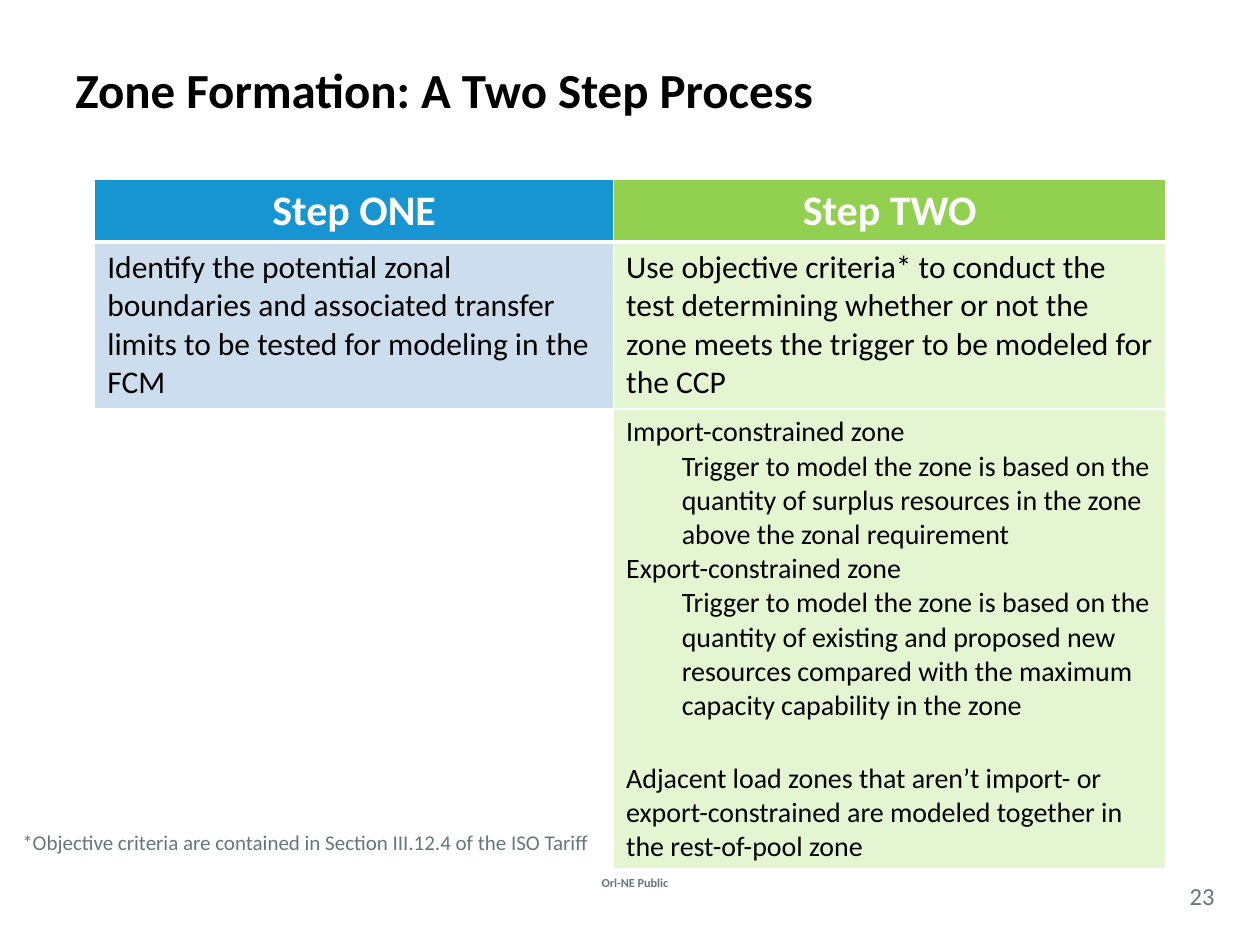
from dataclasses import dataclass

from pptx import Presentation, util as u
from pptx.dml.color import RGBColor
from pptx.enum import text
from pptx.oxml import parse_xml
from pptx.oxml.ns import nsdecls

Cm, Pt = u.Cm, u.Pt
LEFT, MID = text.PP_ALIGN.LEFT, text.PP_ALIGN.CENTER


@dataclass(frozen=True)
class Theme:
    font: str = "Calibri"
    black: str = "000000"
    white: str = "FFFFFF"
    gray: str = "62777F"
    blue: str = "1795D2"
    green: str = "92D050"
    pale_blue: str = "CCDDEE"
    pale_green: str = "E4F5D1"
    title: int = 28
    head: int = 24
    body: int = 18
    detail: int = 16
    page: int = 14
    note: int = 12
    foot: int = 7


T = Theme()

HEADS = ["Step ONE", "Step TWO"]
GOALS = [
    "Identify the potential zonal boundaries and associated transfer limits "
    "to be tested for modeling in the FCM",
    "Use objective criteria* to conduct the test determining whether or not "
    "the zone meets the trigger to be modeled for the CCP",
]
# Each detail line: words, left indent in cm, space before in points
RULES = [
    ("Import-constrained zone", 0, 0),
    ("Trigger to model the zone is based on the quantity of surplus "
     "resources in the zone above the zonal requirement", 1.12, 0),
    ("Export-constrained zone", 0, 0),
    ("Trigger to model the zone is based on the quantity of existing and "
     "proposed new resources compared with the maximum capacity capability "
     "in the zone", 1.12, 0),
    ("Adjacent load zones that aren’t import- or export-constrained are "
     "modeled together in the rest-of-pool zone", 0, 22),
]


def style(para, size, color, bold=False, align=LEFT):
    para.alignment = align
    for run in para.runs:
        font = run.font
        font.name, font.size, font.bold = T.font, Pt(size), bold
        font.color.rgb = RGBColor.from_string(color)


def add_text(slide, words, box, size, color, bold=False, align=LEFT,
             anchor=text.MSO_ANCHOR.MIDDLE, wrap=True, inset=True):
    frame = slide.shapes.add_textbox(*map(Cm, box)).text_frame
    frame.text = words
    frame.word_wrap = wrap
    frame.vertical_anchor = anchor
    if not inset:
        frame.margin_left = frame.margin_right = 0
        frame.margin_top = frame.margin_bottom = 0
    style(frame.paragraphs[0], size, color, bold, align)


def edge(cell, bottom=1, top=1):
    """Draw white borders; widths are in points."""
    props = cell._tc.get_or_add_tcPr()
    sides = [("L", 1), ("R", 1), ("T", top), ("B", bottom)]
    for spot, (side, width) in enumerate(sides):
        props.insert(spot, parse_xml(
            f'<a:ln{side} {nsdecls("a")} w="{Pt(width)}"><a:solidFill>'
            f'<a:srgbClr val="{T.white}"/></a:solidFill></a:ln{side}>'))


def paint(cell, color):
    cell.fill.solid()
    cell.fill.fore_color.rgb = RGBColor.from_string(color)


def fill_rules(cell):
    frame = cell.text_frame
    for num, (words, left, gap) in enumerate(RULES):
        para = frame.add_paragraph() if num else frame.paragraphs[0]
        para.text = words
        if left:
            para._p.get_or_add_pPr().set("marL", str(Cm(left)))
        if gap:
            para.space_before = Pt(gap)
        style(para, T.detail, T.black)


def add_steps(slide):
    widths, heights = [10.46, 11.13], [1.27, 3.36, 9.28]
    grid = slide.shapes.add_table(
        len(heights), len(widths), Cm(1.91), Cm(3.61),
        Cm(sum(widths)), Cm(sum(heights))).table
    for col, width in zip(grid.columns, widths):
        col.width = Cm(width)
    for row, height in zip(grid.rows, heights):
        row.height = Cm(height)

    # Fills and borders
    fills = [(T.blue, T.green), (T.pale_blue, T.pale_green),
             (T.white, T.pale_green)]
    for r, shades in enumerate(fills):
        for c, shade in enumerate(shades):
            cell = grid.cell(r, c)
            paint(cell, shade)
            edge(cell, bottom=3 if r == 0 else 1, top=3 if r == 1 else 1)

    # Wording
    for c, (head, goal) in enumerate(zip(HEADS, GOALS)):
        top, low = grid.cell(0, c), grid.cell(1, c)
        top.text_frame.text = head
        style(top.text_frame.paragraphs[0], T.head, T.white, True, MID)
        low.text_frame.text = goal
        style(low.text_frame.paragraphs[0], T.body, T.black)
    fill_rules(grid.cell(2, 1))


def main():
    deck = Presentation()
    deck.slide_width, deck.slide_height = Cm(25.4), Cm(19.05)
    slide = deck.slides.add_slide(deck.slide_layouts[6])

    # Footer and title
    add_text(slide, "Orl-NE Public", (10.36, 17.58, 4.88, 0.43),
             T.foot, T.gray, True, MID)
    add_text(slide, "Zone Formation: A Two Step Process",
             (1.27, 0.2, 22.86, 3.18), T.title, T.black, True)

    # Page number
    add_text(slide, "23", (23.7, 17.68, 1.07, 0.74), T.page, T.gray,
             align=MID, inset=False)

    # Steps and their footnote
    add_steps(slide)
    add_text(slide, "*Objective criteria are contained in Section III.12.4 "
             "of the ISO Tariff", (0.2, 16.59, 12.17, 0.76), T.note, T.gray,
             anchor=text.MSO_ANCHOR.TOP, wrap=False)

    deck.save("out.pptx")


if __name__ == "__main__":
    main()
